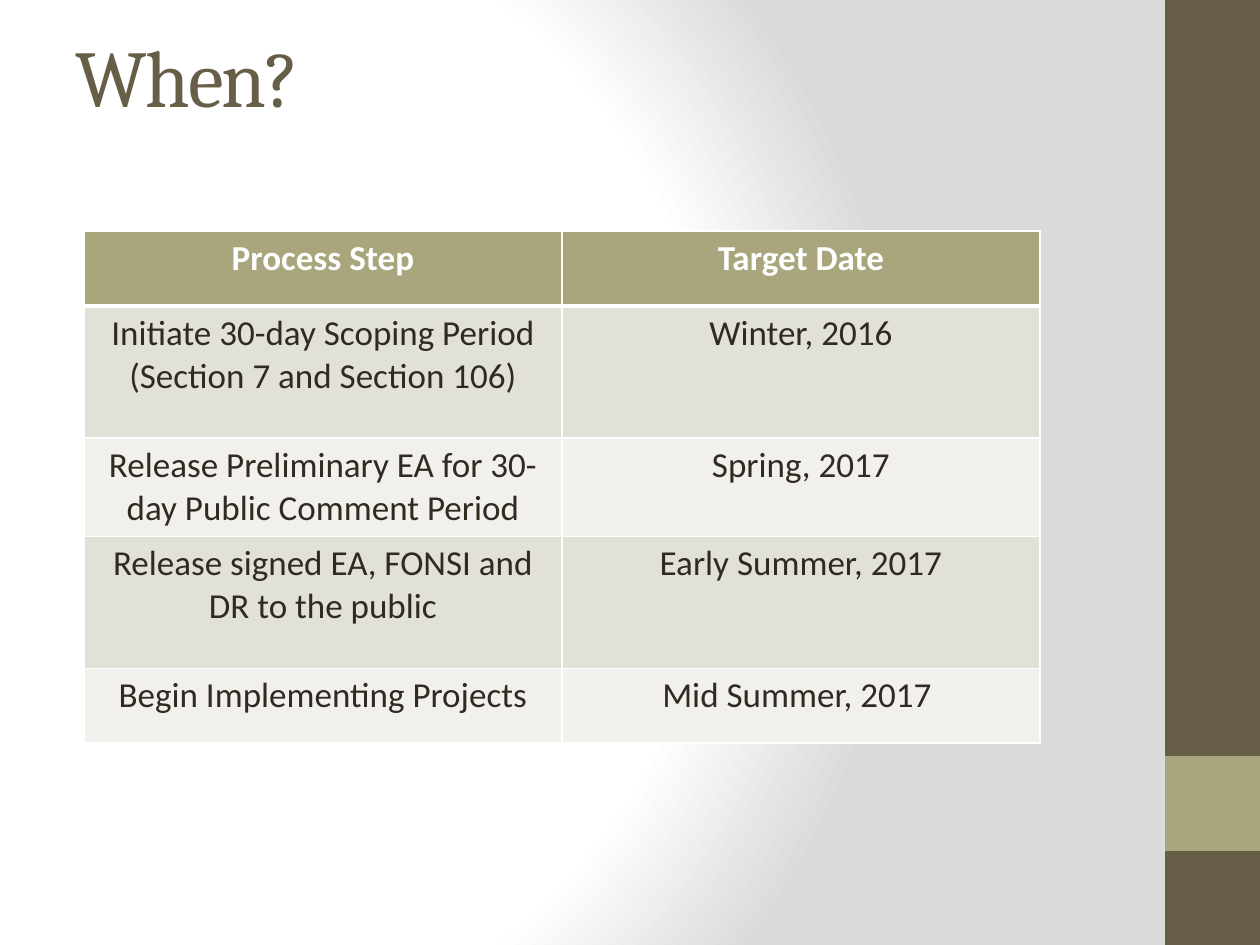
from pptx import Presentation
from pptx.dml.color import RGBColor
from pptx.enum.shapes import MSO_SHAPE
from pptx.enum.text import MSO_ANCHOR, PP_ALIGN
from pptx.oxml import parse_xml
from pptx.oxml.ns import nsdecls
from pptx.util import Emu, Pt

BROWN = RGBColor(0x67, 0x5E, 0x47)
OLIVE = RGBColor(0xA9, 0xA5, 0x7C)
INK = RGBColor(0x2F, 0x2B, 0x20)
WHITE = RGBColor(0xFF, 0xFF, 0xFF)
GREY = RGBColor(0xDA, 0xDA, 0xDA)
BANDS = (RGBColor(0xE2, 0xE1, 0xD7), RGBColor(0xF1, 0xF0, 0xEC))

SCHEDULE = [
    ("Process Step", "Target Date"),
    ("Initiate 30-day Scoping Period (Section 7 and Section 106)", "Winter, 2016"),
    ("Release Preliminary EA for 30-day Public Comment Period", "Spring, 2017"),
    ("Release signed EA, FONSI and DR to the public", "Early Summer, 2017"),
    ("Begin Implementing Projects", "Mid Summer, 2017 "),
]
ROW_HEIGHTS = (75, 132, 97, 132, 75)


def px(n):
    """Turn px into EMU at 126 px to the inch."""
    return Emu(round(n * 914400 / 126))


def set_font(font, color, **values):
    """Set the font attributes and colour."""
    for name, value in values.items():
        setattr(font, name, value)
    font.color.rgb = color


def set_background(s):
    """Fill the slide with a circular white to grey gradient."""
    fill = s.background.fill
    fill.solid()
    fill.fore_color.rgb = WHITE
    solid = s.element.xpath("./p:cSld/p:bg/p:bgPr/a:solidFill")[0]
    stops = "".join(
        f'<a:gs pos="{pos * 1000}"><a:srgbClr val="{color}"/></a:gs>'
        for pos, color in ((0, WHITE), (75, WHITE), (100, GREY)))
    grad = parse_xml(
        f'<a:gradFill {nsdecls("a")} rotWithShape="1"><a:gsLst>{stops}</a:gsLst>'
        '<a:path path="circle"><a:fillToRect l="20000" t="50000" r="100000" b="50000"/>'
        '</a:path></a:gradFill>')
    solid.getparent().replace(solid, grad)


def add_sidebar(s, x, y, w, h):
    """Draw the brown side band with its olive square."""
    for top, height, color in ((y, h, BROWN), (y + 756, w, OLIVE)):
        sp = s.shapes.add_shape(MSO_SHAPE.RECTANGLE, px(x), px(top), px(w), px(height))
        sp.shadow.inherit = False
        sp.fill.solid()
        sp.fill.fore_color.rgb = color
        sp.line.fill.background()


def add_title(s, text, x, y, w, h):
    """Place and format the title placeholder."""
    sp = s.shapes.title
    sp.left, sp.top, sp.width, sp.height = map(px, (x, y, w, h))
    tf = sp.text_frame
    tf.vertical_anchor = MSO_ANCHOR.MIDDLE
    p = tf.paragraphs[0]
    p.alignment = PP_ALIGN.LEFT
    r = p.add_run()
    r.text = text
    set_font(r.font, BROWN, name="Cambria", size=Pt(46))
    r.font._element.set("spc", "-100")


def set_borders(cell, widths):
    """Give the cell white borders of the given widths in points."""
    tc_pr = cell._tc.get_or_add_tcPr()
    for i, (side, width) in enumerate(widths.items()):
        tc_pr.insert(i, parse_xml(
            f'<a:ln{side} {nsdecls("a")} w="{Pt(width)}"><a:solidFill>'
            f'<a:srgbClr val="{WHITE}"/></a:solidFill></a:ln{side}>'))


def add_schedule(s, x, y, w):
    """Build the table of process steps and target dates."""
    cols = len(SCHEDULE[0])
    table = s.shapes.add_table(len(SCHEDULE), cols, px(x), px(y), px(w),
                               px(sum(ROW_HEIGHTS))).table
    for col in table.columns:
        col.width = px(w / cols)
    for i, (row, height) in enumerate(zip(SCHEDULE, ROW_HEIGHTS)):
        table.rows[i].height = px(height)
        header = i == 0
        for j, text in enumerate(row):
            cell = table.cell(i, j)
            cell.fill.solid()
            cell.fill.fore_color.rgb = OLIVE if header else BANDS[(i - 1) % 2]
            set_borders(cell, {"L": 1, "R": 1, "T": 3 if i == 1 else 1,
                               "B": 3 if header else 1})
            p = cell.text_frame.paragraphs[0]
            p.alignment = PP_ALIGN.CENTER
            r = p.add_run()
            r.text = text
            set_font(r.font, WHITE if header else INK,
                     name="Calibri", size=Pt(20), bold=header)


def main():
    """Build and save the slide."""
    prs = Presentation()
    prs.slide_width, prs.slide_height = px(1260), px(945)
    s = prs.slides.add_slide(prs.slide_layouts[5])
    set_background(s)
    add_sidebar(s, 1165, 0, 95, 945)
    add_title(s, "When?", 63, 10, 1050, 130)
    add_schedule(s, 84, 231, 956)
    prs.save("out.pptx")


if __name__ == "__main__":
    main()
